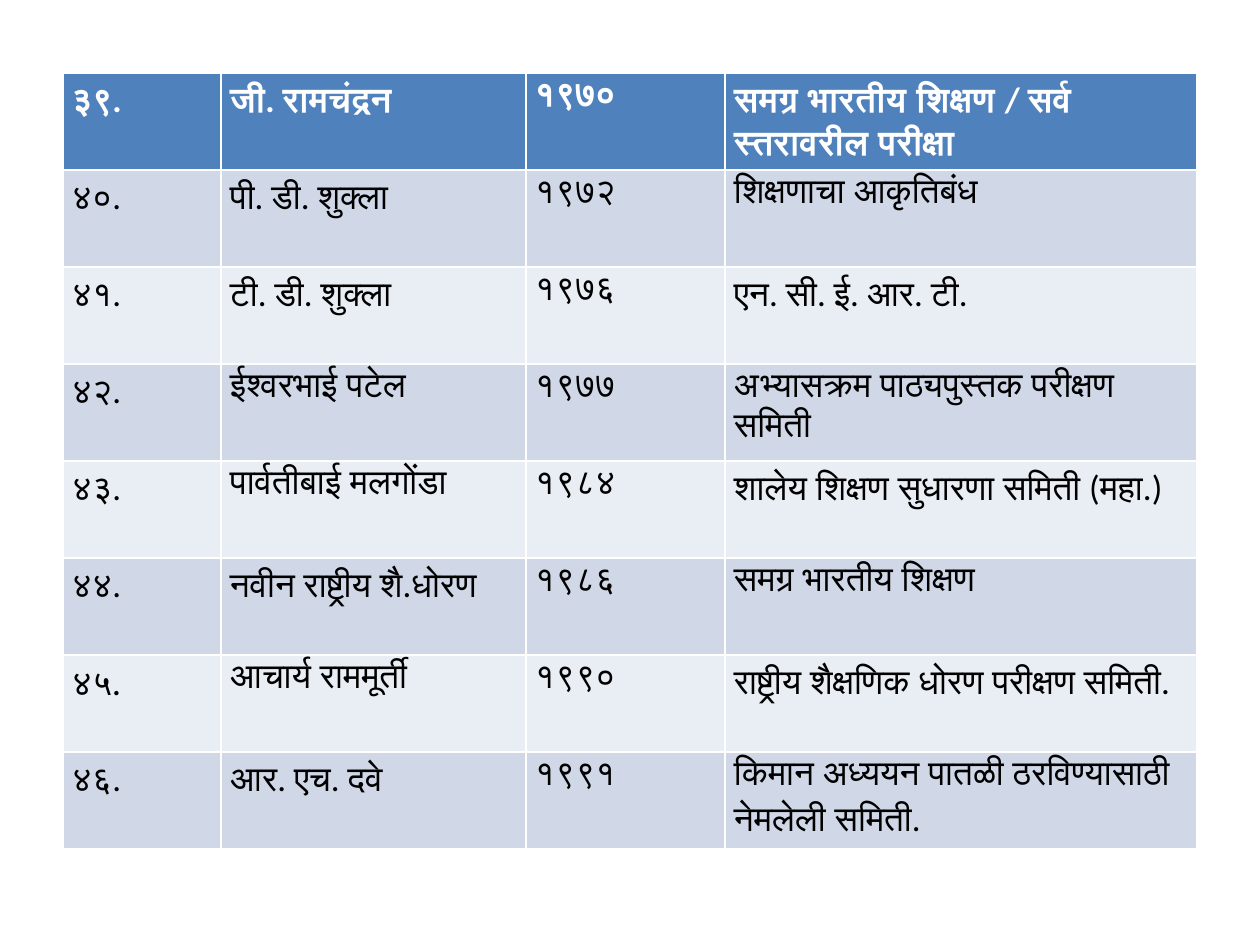
from dataclasses import dataclass

from pptx import Presentation
from pptx.dml.color import RGBColor
from pptx.util import Emu, Pt

EMU_PER_PX = 914400 // 126
HEADER_FILL = "4F81BD"
BAND_FILLS = ("E9EDF4", "D0D8E8")
COLUMN_WIDTHS = (158, 305, 199, 472)
ROW_HEIGHT = 97
FULL_STOP_FONTS = {"४५.": "Lato"}


@dataclass(frozen=True)
class Committee:
    number: str
    name: str
    year: str
    subject: str


COMMITTEES = (
    Committee("३९.", "जी. रामचंद्रन", "१९७०", "समग्र भारतीय शिक्षण / सर्व स्तरावरील परीक्षा"),
    Committee("४०.", "पी. डी. शुक्ला", "१९७२", "शिक्षणाचा आकृतिबंध"),
    Committee("४१.", "टी. डी. शुक्ला", "१९७६", "एन. सी. ई. आर. टी."),
    Committee("४२.", "ईश्वरभाई पटेल", "१९७७", "अभ्यासक्रम पाठ्यपुस्तक परीक्षण समिती"),
    Committee("४३.", "पार्वतीबाई मलगोंडा", "१९८४", "शालेय शिक्षण सुधारणा समिती (महा.)"),
    Committee("४४.", "नवीन राष्ट्रीय शै.धोरण", "१९८६", "समग्र भारतीय शिक्षण"),
    Committee("४५.", "आचार्य राममूर्ती", "१९९०", "राष्ट्रीय शैक्षणिक धोरण परीक्षण समिती."),
    Committee("४६.", "आर. एच. दवे", "१९९१", "किमान अध्ययन पातळी ठरविण्यासाठी नेमलेली समिती."),
)


def px(length: int) -> Emu:
    return Emu(length * EMU_PER_PX)


def color(value: str) -> RGBColor:
    return RGBColor.from_string(value)


def fill_cell(cell, text: str, fill: str, is_header: bool) -> None:
    cell.fill.solid()
    cell.fill.fore_color.rgb = color(fill)
    cell.margin_left = cell.margin_right = px(9)
    cell.margin_top = cell.margin_bottom = px(0)

    para = cell.text_frame.paragraphs[0]
    para.line_spacing = 1.15
    para.space_before = para.space_after = Pt(0.1)
    para.font.name = "Calibri"
    para.font.size = Pt(20)
    para.font.bold = is_header
    para.font.color.rgb = color("FFFFFF" if is_header else "000000")

    if text in FULL_STOP_FONTS:
        para.add_run().text = text[:-1]
        span = para.add_run()
        span.text = text[-1]
        span.font.name = FULL_STOP_FONTS[text]
    else:
        para.add_run().text = text


def draw_committees(page, committees: tuple[Committee, ...]) -> None:
    table = page.shapes.add_table(
        len(committees), len(COLUMN_WIDTHS), px(63), px(73),
        px(sum(COLUMN_WIDTHS)), px(ROW_HEIGHT * len(committees)),
    ).table
    for column, width in zip(table.columns, COLUMN_WIDTHS):
        column.width = px(width)
    for index, (row, committee) in enumerate(zip(table.rows, committees)):
        row.height = px(ROW_HEIGHT)
        is_header = index == 0
        fill = HEADER_FILL if is_header else BAND_FILLS[index % 2]
        texts = (committee.number, committee.name, committee.year, committee.subject)
        for cell, text in zip(row.cells, texts):
            fill_cell(cell, text, fill, is_header)


def main() -> None:
    deck = Presentation()
    deck.slide_width, deck.slide_height = px(1260), px(945)
    page = deck.slides.add_slide(deck.slide_layouts[6])
    draw_committees(page, COMMITTEES)
    deck.save("out.pptx")


if __name__ == "__main__":
    main()
